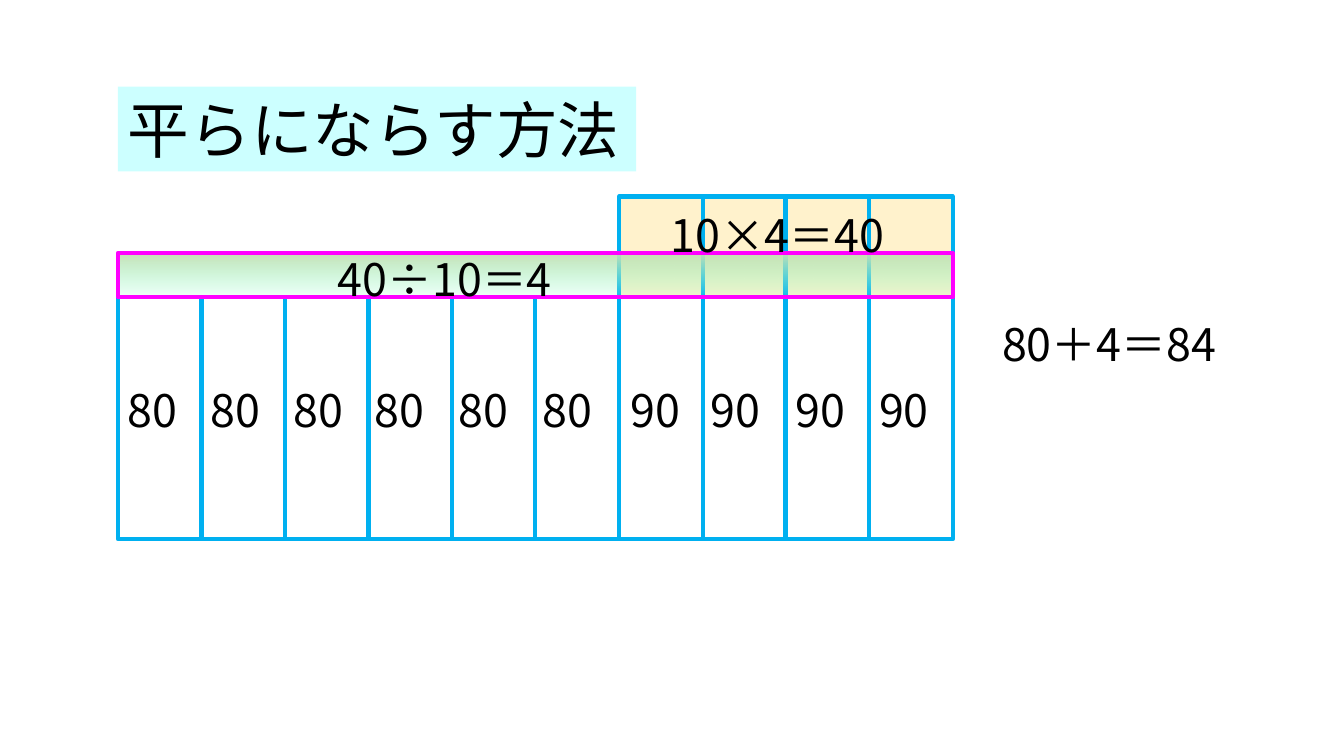
from lxml.etree import SubElement
from pptx import Presentation
from pptx.dml.color import RGBColor
from pptx.enum.shapes import MSO_SHAPE as Shape
from pptx.enum.text import MSO_ANCHOR as Anchor, MSO_AUTO_SIZE as AutoSize, PP_ALIGN as Align
from pptx.oxml.ns import qn
from pptx.util import Pt

PX = 9144
BLACK = RGBColor(0x00, 0x00, 0x00)
CREAM = RGBColor(0xFF, 0xF2, 0xCC)
NAVY = RGBColor(0x32, 0x54, 0x91)
SKY = RGBColor(0x00, 0xB0, 0xF0)
MAGENTA = RGBColor(0xFF, 0x00, 0xFF)
LEAF = RGBColor(0xC5, 0xE0, 0xB4)
MINT = RGBColor(0x99, 0xFF, 0xCC)
PALE_CYAN = RGBColor(0xCC, 0xFF, 0xFF)


class LevellingSlide:
    """Draws styled elements on one slide, with lengths in px."""

    font = "Noto Sans CJK JP"

    def __init__(self, slide):
        self.shapes = slide.shapes

    def rect(self, left, top, width, height, fill=None, line=None, weight=3):
        box = self.shapes.add_shape(
            Shape.RECTANGLE, *(round(n) * PX for n in (left, top, width, height)))
        box.shadow.inherit = False
        if fill is None:
            box.fill.background()
        else:
            box.fill.solid()
            box.fill.fore_color.rgb = fill
        if line is None:
            box.line.fill.background()
        else:
            box.line.color.rgb = line
            box.line.width = Pt(weight)
        return box

    def fading_band(self, left, top, width, height, start, end, opacity, line):
        band = self.rect(left, top, width, height, line=line)
        band.fill.gradient()
        band.fill.gradient_angle = 270
        for stop, color in zip(band.fill.gradient_stops, (start, end)):
            stop.color.rgb = color
        end_color = band.element.xpath(".//a:gs/a:srgbClr")[-1]
        SubElement(end_color, qn("a:alpha")).set("val", str(opacity * 1000))

    def set_text(self, box, text, size):
        frame = box.text_frame
        frame.text = text
        frame.word_wrap = True
        frame.auto_size = AutoSize.SHAPE_TO_FIT_TEXT
        frame.vertical_anchor = Anchor.TOP
        paragraph = frame.paragraphs[0]
        paragraph.alignment = Align.LEFT
        font = paragraph.runs[0].font
        font.name = self.font
        font.size = Pt(size)
        font.color.rgb = BLACK
        run_style = box.element.xpath(".//a:rPr")[0]
        SubElement(run_style, qn("a:ea")).set("typeface", self.font)

    def label(self, left, top, width, text):
        box = self.shapes.add_textbox(left * PX, top * PX, width * PX, 64 * PX)
        self.set_text(box, text, 32)

    def heading(self, left, top, width, height, text):
        self.set_text(self.rect(left, top, width, height, PALE_CYAN), text, 44)


def main():
    deck = Presentation()
    deck.slide_width = 1333 * PX
    deck.slide_height = 750 * PX
    page = LevellingSlide(deck.slides.add_slide(deck.slide_layouts[6]))

    scores = [80] * 6 + [90] * 4
    score_lefts = [117, 199, 281, 362, 445, 528, 616, 695, 779, 862]
    chart_left, chart_width, base, low_top = 117, 828, 535, 295
    bar_width = chart_width / len(scores)

    page.rect(614, 195, 331, 100, CREAM, NAVY, 1)
    for index, score in enumerate(scores):
        top = low_top - (score - 80) * 10
        page.rect(chart_left + index * bar_width, top, bar_width, base - top, line=SKY)
    for left, score in zip(score_lefts, scores):
        page.label(left, 375, 84, str(score))

    page.fading_band(chart_left, 251, chart_width, 44, LEAF, MINT, 10, MAGENTA)
    for left, top, formula in ((655, 201, "10×4＝40"),
                               (325, 245, "40÷10＝4"),
                               (984, 309, "80＋4＝84")):
        page.label(left, top, 269, formula)
    page.heading(chart_left, 86, 514, 84, "平らにならす方法")
    deck.save("out.pptx")


if __name__ == "__main__":
    main()
